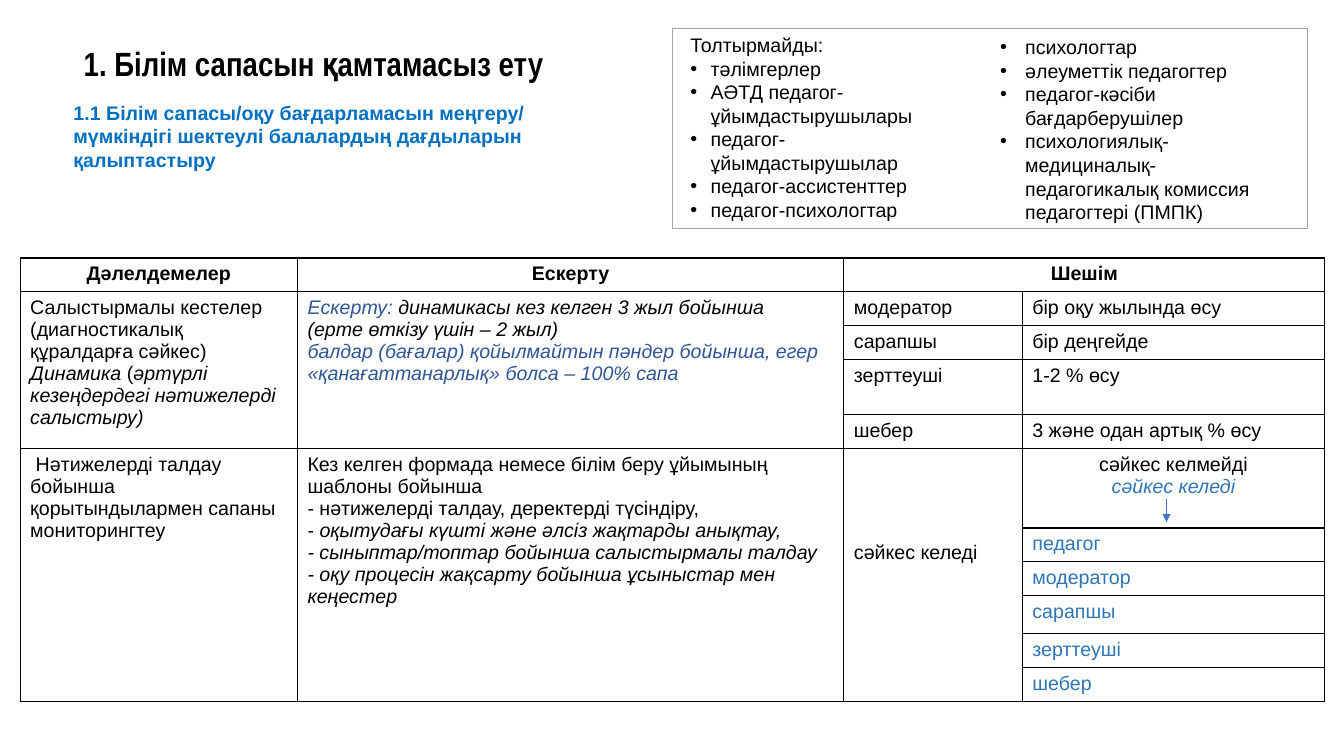
import pptx
import pptx.util
import pptx.oxml
import pptx.dml.color
import pptx.enum.shapes
import pptx.enum.text
from dataclasses import dataclass
from pptx.oxml.ns import qn


@dataclass(frozen=True)
class Theme:
    font: str = "Arial"
    title_font: str = "Arial Narrow"
    title_size: int = 24
    body_size: int = 14
    black: str = "000000"
    white: str = "FFFFFF"
    subtitle: str = "0070C0"
    note: str = "2F5597"
    answer: str = "2E75B6"
    arrow: str = "4472C4"
    frame: str = "A5A5A5"


THEME = Theme()

# Content: a paragraph is a list of runs (text, colour, italic)
TITLE = "1. Білім сапасын қамтамасыз ету"
SUBTITLE = ("1.1 Білім сапасы/оқу бағдарламасын меңгеру/ "
            "мүмкіндігі шектеулі балалардың дағдыларын қалыптастыру")
EXEMPT_HEADING = "Толтырмайды:"
EXEMPT_LEFT = ["тәлімгерлер", "АӘТД педагог-ұйымдастырушылары",
               "педагог-ұйымдастырушылар", "педагог-ассистенттер",
               "педагог-психологтар"]
EXEMPT_RIGHT = ["психологтар", "әлеуметтік педагогтер",
                "педагог-кәсіби бағдарберушілер",
                "психологиялық-медициналық-педагогикалық комиссия "
                "педагогтері (ПМПК)"]
HEADERS = ["Дәлелдемелер", "Ескерту", "Шешім"]
COMPARISON = [("Салыстырмалы кестелер (диагностикалық құралдарға сәйкес) ", THEME.black, False),
              ("Динамика", THEME.black, True),
              (" (", THEME.black, False),
              ("әртүрлі кезеңдердегі нәтижелерді салыстыру)", THEME.black, True)]
COMPARISON_NOTE = [("Ескерту: ", THEME.note, True),
                   ("динамикасы кез келген 3 жыл бойынша\n(ерте өткізу үшін – 2 жыл)\n",
                    THEME.black, True),
                   ("балдар (бағалар) қойылмайтын пәндер бойынша, егер "
                    "«қанағаттанарлық» болса – 100% сапа", THEME.note, True)]
LEVELS = [("модератор", "бір оқу жылында өсу"), ("сарапшы", "бір деңгейде"),
          ("зерттеуші", "1-2 % өсу"), ("шебер", "3 және одан артық % өсу")]
MONITORING = [(" Нәтижелерді талдау бойынша қорытындылармен сапаны мониторингтеу",
               THEME.black, False)]
MONITORING_NOTE = [("Кез келген формада немесе білім беру ұйымының шаблоны бойынша\n"
                    "- нәтижелерді талдау, деректерді түсіндіру,\n- ", THEME.black, False),
                   ("оқытудағы күшті және әлсіз жақтарды анықтау,\n"
                    "- сыныптар/топтар бойынша салыстырмалы талдау\n"
                    "- оқу процесін жақсарту бойынша ұсыныстар мен кеңестер",
                    THEME.black, True)]
MATCH, NO_MATCH = "сәйкес келеді", "сәйкес келмейді"
MATCHING_LEVELS = ["педагог", "модератор", "сарапшы", "зерттеуші", "шебер"]

# Layout in inches
SLIDE_SIZE = (13.33, 7.5)
TITLE_BOX = (0.73, 0.36, 11.5, 0.59)
SUBTITLE_BOX = (0.63, 0.95, 5.58, 0.81)
FRAME_BOX = (6.67, 0.28, 6.3, 1.99)
LEFT_BOX = (6.75, 0.28, 2.94, 1.99)
RIGHT_BOX = (9.82, 0.3, 3.03, 1.69)
TABLE_ORIGIN = (0.2, 2.56)
COLUMNS = [2.75, 5.42, 1.77, 3.0]
ROW = 0.335
ROWS = [ROW, ROW, ROW, 0.55, ROW, 0.79, ROW, ROW, 0.38, ROW, ROW]
MATCH_BOTTOM_MARGIN = 0.49
ARROW = (11.57, 4.95, 11.57, 5.18)

CENTER = pptx.enum.text.PP_ALIGN.CENTER
LEFT = pptx.enum.text.PP_ALIGN.LEFT
MIDDLE = pptx.enum.text.MSO_ANCHOR.MIDDLE
TOP = pptx.enum.text.MSO_ANCHOR.TOP


def inches(values):
    return [pptx.util.Inches(value) for value in values]


def rgb(colour):
    return pptx.dml.color.RGBColor.from_string(colour)


def style(paragraph, colour=THEME.black, bold=False, size=THEME.body_size,
          name=THEME.font, align=LEFT):
    paragraph.alignment = align
    font = paragraph.font
    font.name, font.size, font.bold = name, pptx.util.Pt(size), bold
    font.color.rgb = rgb(colour)


def add_bullet(paragraph, indent):
    properties = paragraph._p.get_or_add_pPr()
    offset = pptx.util.Inches(indent)
    properties.set("marL", str(offset))
    properties.set("indent", str(-offset))
    for tag, attributes in (("a:buFont", {"typeface": THEME.font}), ("a:buChar", {"char": "•"})):
        bullet = properties.makeelement(qn(tag), attributes)
        properties.insert_element_before(bullet, "a:tabLst", "a:defRPr", "a:extLst")


def add_text(slide, box, lines, colour=THEME.black, bold=False, indent=0, plain_lines=0):
    frame = slide.shapes.add_textbox(*inches(box)).text_frame
    frame.word_wrap = True
    for index, line in enumerate(lines):
        paragraph = frame.add_paragraph() if index else frame.paragraphs[0]
        paragraph.text = line
        style(paragraph, colour, bold)
        if index >= plain_lines:
            add_bullet(paragraph, indent)


def fill_cell(cell, paragraphs, bold=False, align=LEFT, anchor=TOP):
    cell.vertical_anchor = anchor
    for index, runs in enumerate(paragraphs):
        paragraph = cell.text_frame.add_paragraph() if index else cell.text_frame.paragraphs[0]
        style(paragraph, bold=bold, align=align)
        for text, colour, italic in runs:
            for part, words in enumerate(text.split("\n")):
                if part:
                    paragraph.add_line_break()
                if words:
                    run = paragraph.add_run()
                    run.text = words
                    run.font.italic = italic
                    run.font.color.rgb = rgb(colour)


def add_borders(cell):
    properties = cell._tc.get_or_add_tcPr()
    for position, side in enumerate(("lnL", "lnR", "lnT", "lnB")):
        properties.insert(position, pptx.oxml.parse_xml(
            f'<a:{side} xmlns:a="http://schemas.openxmlformats.org/drawingml/2006/main" w="12700">'
            f'<a:solidFill><a:srgbClr val="{THEME.black}"/></a:solidFill></a:{side}>'))


def add_table(slide):
    size = (sum(COLUMNS), sum(ROWS))
    table = slide.shapes.add_table(len(ROWS), len(COLUMNS),
                                   *inches(TABLE_ORIGIN + size)).table
    for column, width in zip(table.columns, COLUMNS):
        column.width = pptx.util.Inches(width)
    for row, height in zip(table.rows, ROWS):
        row.height = pptx.util.Inches(height)
    for cell in table.iter_cells():
        cell.fill.solid()
        cell.fill.fore_color.rgb = rgb(THEME.white)
        add_borders(cell)

    # Merged areas: header pair, comparison rows, monitoring rows
    first, second = 1, 1 + len(LEVELS)
    last = len(ROWS) - 1
    table.cell(0, 2).merge(table.cell(0, 3))
    for column in (0, 1):
        table.cell(first, column).merge(table.cell(second - 1, column))
    for column in (0, 1, 2):
        table.cell(second, column).merge(table.cell(last, column))

    for column, header in enumerate(HEADERS):
        fill_cell(table.cell(0, column), [[(header, THEME.black, False)]], True, CENTER)
    fill_cell(table.cell(first, 0), [COMPARISON])
    fill_cell(table.cell(first, 1), [COMPARISON_NOTE])
    for row, level in enumerate(LEVELS, first):
        for column, text in enumerate(level, 2):
            fill_cell(table.cell(row, column), [[(text, THEME.black, False)]])
    fill_cell(table.cell(second, 0), [MONITORING])
    fill_cell(table.cell(second, 1), [MONITORING_NOTE])
    match_cell = table.cell(second, 2)
    fill_cell(match_cell, [[(MATCH, THEME.black, False)]], anchor=MIDDLE)
    match_cell.margin_bottom = pptx.util.Inches(MATCH_BOTTOM_MARGIN)
    # Both answers sit at the top, leaving room for the arrow below
    fill_cell(table.cell(second, 3), [[(NO_MATCH, THEME.black, False)],
                                      [(MATCH, THEME.answer, True)]], align=CENTER)
    for row, text in enumerate(MATCHING_LEVELS, second + 1):
        fill_cell(table.cell(row, 3), [[(text, THEME.answer, False)]])


def add_arrow(slide):
    arrow = slide.shapes.add_connector(pptx.enum.shapes.MSO_CONNECTOR.STRAIGHT, *inches(ARROW))
    arrow.line.color.rgb = rgb(THEME.arrow)
    arrow.line.width = pptx.util.Pt(0.5)
    line = arrow.line._get_or_add_ln()
    line.append(line.makeelement(qn("a:tailEnd"), {"type": "triangle"}))
    properties = arrow._element.spPr
    properties.append(properties.makeelement(qn("a:effectLst"), {}))


def main():
    presentation = pptx.Presentation()
    presentation.slide_width, presentation.slide_height = inches(SLIDE_SIZE)
    slide = presentation.slides.add_slide(presentation.slide_layouts[5])

    # Title
    title = slide.shapes.title
    title.left, title.top, title.width, title.height = inches(TITLE_BOX)
    title.text_frame.text = TITLE
    title.text_frame.vertical_anchor = MIDDLE
    heading = title.text_frame.paragraphs[0]
    style(heading, bold=True, size=THEME.title_size, name=THEME.title_font)
    heading.line_spacing = 0.9

    # Framed list of exempt staff; the frame goes behind the title
    frame = slide.shapes.add_shape(pptx.enum.shapes.MSO_SHAPE.RECTANGLE, *inches(FRAME_BOX))
    frame.shadow.inherit = False
    frame.fill.solid()
    frame.fill.fore_color.rgb = rgb(THEME.white)
    frame.line.color.rgb = rgb(THEME.frame)
    frame.line.width = pptx.util.Pt(1)
    title._element.addprevious(frame._element)
    add_text(slide, RIGHT_BOX, EXEMPT_RIGHT, indent=0.25)
    add_text(slide, SUBTITLE_BOX, [SUBTITLE], THEME.subtitle, True, plain_lines=1)
    add_text(slide, LEFT_BOX, [EXEMPT_HEADING] + EXEMPT_LEFT, indent=0.2, plain_lines=1)

    # Criteria table and arrow
    add_table(slide)
    add_arrow(slide)
    presentation.save("out.pptx")


if __name__ == "__main__":
    main()
